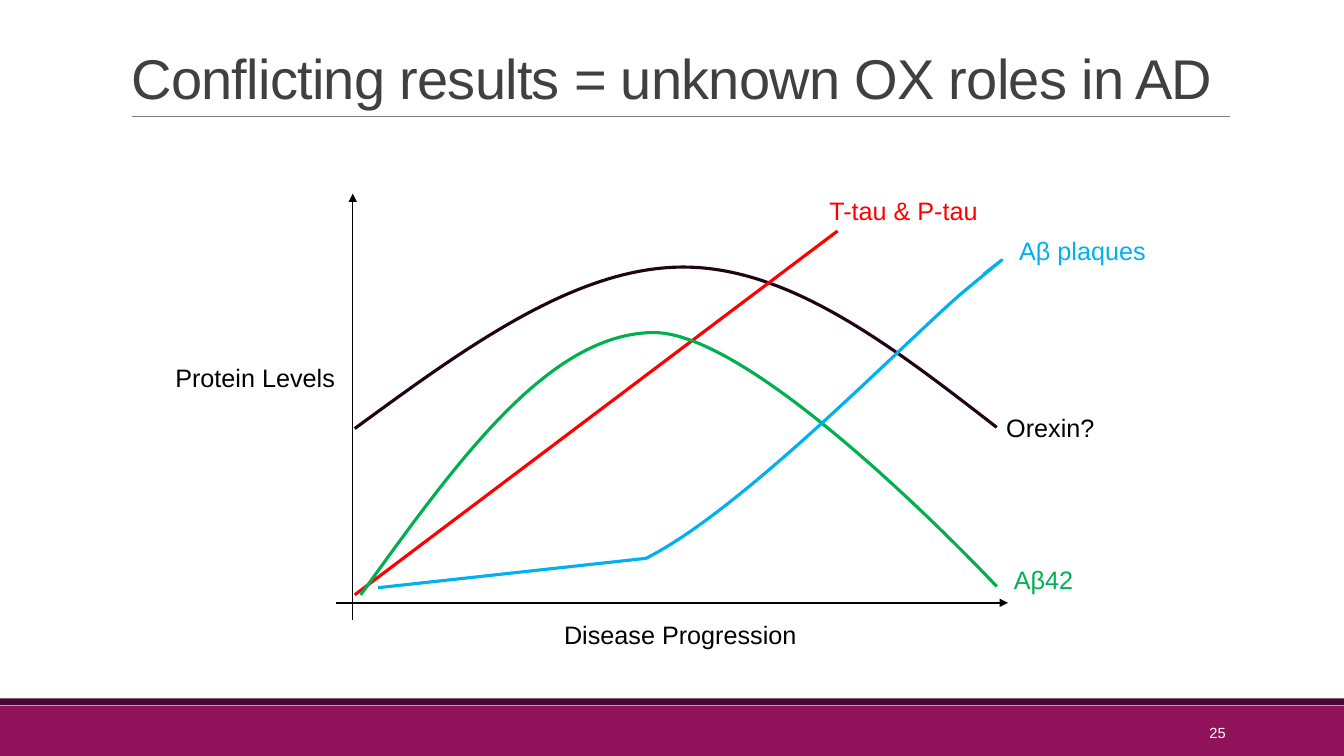
from dataclasses import dataclass

import pptx
import pptx.dml.color
import pptx.enum.shapes
import pptx.enum.text
import pptx.oxml
import pptx.oxml.ns
import pptx.shapes.shapetree
import pptx.util
from pptx.util import Cm

RGBColor = pptx.dml.color.RGBColor
Align = pptx.enum.text.PP_ALIGN
Anchor = pptx.enum.text.MSO_ANCHOR
AutoSize = pptx.enum.text.MSO_AUTO_SIZE
Shapes = pptx.shapes.shapetree.SlideShapes | pptx.shapes.shapetree.GroupShapes

WHITE = RGBColor(0xFF, 0xFF, 0xFF)
BLACK = RGBColor(0x00, 0x00, 0x00)
CHARCOAL = RGBColor(0x40, 0x40, 0x40)
GREY = RGBColor(0x80, 0x80, 0x80)
MAGENTA = RGBColor(0x90, 0x12, 0x5A)
PLUM = RGBColor(0x45, 0x09, 0x30)
DARK_PLUM = RGBColor(0x1E, 0x04, 0x15)
RED = RGBColor(0xFF, 0x00, 0x00)
GREEN = RGBColor(0x00, 0xB0, 0x50)
BLUE = RGBColor(0x00, 0xB0, 0xF0)

PAGE_WIDTH, PAGE_HEIGHT = 33.87, 19.05

Point = tuple[float, float]


@dataclass
class Band:
    top: float
    height: float
    color: RGBColor


@dataclass
class Line:
    start: Point
    end: Point
    color: RGBColor
    weight: float
    arrow: bool = False


@dataclass
class Curve:
    """Each segment lists its control points and its end: one for a line, three for a cubic."""
    start: Point
    segments: list[list[Point]]
    color: RGBColor


@dataclass
class Label:
    text: str
    left: float
    top: float
    width: float
    color: RGBColor
    height: float = 1.02
    size: float = 18
    align: Align = Align.CENTER
    anchor: Anchor = Anchor.TOP
    auto_size: AutoSize = AutoSize.SHAPE_TO_FIT_TEXT
    line_spacing: float = 1.0
    tracking: float = 0


BANDS = [Band(17.78, 1.27, MAGENTA), Band(17.6, 0.17, PLUM)]
TITLE_RULE = Line((2.95 + 0.38, 2.94), (31, 2.94), GREY, 0.5)
TITLE = Label("Conflicting results = unknown OX roles in AD", 3.06, 0.79, 27.94, CHARCOAL,
              height=2.13, size=40, align=Align.LEFT, anchor=Anchor.BOTTOM,
              auto_size=AutoSize.NONE, line_spacing=0.85, tracking=-0.5)
PAGE_NUMBER = Label("25", 27.51, 17.95, 3.63, WHITE, size=10.5, align=Align.RIGHT,
                    anchor=Anchor.MIDDLE, auto_size=AutoSize.NONE)

AXES = [
    Line((8.48, 15.19), (25.4, 15.19), BLACK, 1, arrow=True),
    Line((8.89, 15.62), (8.89, 4.88), BLACK, 1, arrow=True),
]

CURVES = [
    Curve((8.94, 10.8), [[(11.73, 8.76), (14.5, 6.73), (17.22, 6.73)],
                         [(19.91, 6.73), (22.5, 8.74), (25.12, 10.77)]], DARK_PLUM),
    Curve((8.94, 14.99), [[(21.11, 5.82)]], RED),
    Curve((9.09, 14.99), [[(11.46, 11.71), (13.79, 8.41), (16.46, 8.38)],
                          [(19.13, 8.36), (25.12, 14.78), (25.12, 14.78)]], GREEN),
    Curve((9.53, 14.81), [[(16.28, 14.07)],
                          [(18.75, 12.83), (22.86, 8.56), (24.26, 7.37)],
                          [(25.25, 6.55)], [(24.79, 6.91)]], BLUE),
]

LABELS = [
    Label("Protein Levels", 2.77, 9, 7.32, BLACK),
    Label("Aβ plaques", 24.42, 5.81, 5.72, BLUE),
    Label("Disease Progression", 8.89, 15.47, 16.51, BLACK),
    Label("Orexin?", 23.61, 10.26, 5.72, BLACK),
    Label("T-tau & P-tau", 19.91, 4.8, 5.72, RED),
    Label("Aβ42", 23.44, 14.1, 5.72, GREEN),
]


def draw_band(shapes: Shapes, band: Band) -> None:
    shape = shapes.add_shape(pptx.enum.shapes.MSO_SHAPE.RECTANGLE, Cm(0), Cm(band.top),
                             Cm(PAGE_WIDTH), Cm(band.height))
    shape.shadow.inherit = False
    shape.fill.solid()
    shape.fill.fore_color.rgb = band.color
    shape.line.fill.background()


def draw_line(shapes: Shapes, line: Line) -> None:
    connector = shapes.add_connector(pptx.enum.shapes.MSO_CONNECTOR.STRAIGHT,
                                     *map(Cm, line.start + line.end))
    connector.line.color.rgb = line.color
    connector.line.width = pptx.util.Pt(line.weight)
    properties = connector._element.spPr
    namespace = pptx.oxml.ns.nsdecls("a")
    if line.arrow:
        outline = properties.find(pptx.oxml.ns.qn("a:ln"))
        outline.append(pptx.oxml.parse_xml(f'<a:tailEnd {namespace} type="triangle"/>'))
    properties.append(pptx.oxml.parse_xml(f"<a:effectLst {namespace}/>"))


def draw_curve(shapes: Shapes, curve: Curve) -> None:
    """Lay out all points as straight steps, then join each cubic's three steps into one."""
    points = [point for segment in curve.segments for point in segment]
    builder = shapes.build_freeform(*map(Cm, curve.start))
    builder.add_line_segments([(Cm(x), Cm(y)) for x, y in points], close=False)
    shape = builder.convert_to_shape()
    steps = iter(list(shape._element.iter(pptx.oxml.ns.qn("a:lnTo"))))
    for segment in curve.segments:
        first, *others = [next(steps) for _ in segment]
        if others:
            first.tag = pptx.oxml.ns.qn("a:cubicBezTo")
        for step in others:
            first.append(step[0])
            step.getparent().remove(step)
    shape.shadow.inherit = False
    shape.fill.background()
    shape.line.color.rgb = curve.color
    shape.line.width = pptx.util.Pt(2.25)


def draw_label(shapes: Shapes, label: Label) -> None:
    box = shapes.add_textbox(Cm(label.left), Cm(label.top), Cm(label.width), Cm(label.height))
    frame = box.text_frame
    frame.word_wrap = True
    frame.auto_size = label.auto_size
    frame.vertical_anchor = label.anchor
    para = frame.paragraphs[0]
    para.alignment = label.align
    para.line_spacing = label.line_spacing
    span = para.add_run()
    span.text = label.text
    span.font.name = "Arial"
    span.font.size = pptx.util.Pt(label.size)
    span.font.color.rgb = label.color
    if label.tracking:
        span.font._element.set("spc", str(round(label.tracking * 100)))


def main() -> None:
    deck = pptx.Presentation()
    deck.slide_width, deck.slide_height = Cm(PAGE_WIDTH), Cm(PAGE_HEIGHT)
    page = deck.slides.add_slide(deck.slide_layouts[6])
    for band in BANDS:
        draw_band(page.shapes, band)
    draw_line(page.shapes, TITLE_RULE)
    draw_label(page.shapes, TITLE)
    draw_label(page.shapes, PAGE_NUMBER)
    diagram = page.shapes.add_group_shape().shapes
    for axis in AXES:
        draw_line(diagram, axis)
    for curve in CURVES:
        draw_curve(diagram, curve)
    for label in LABELS:
        draw_label(diagram, label)
    deck.save("out.pptx")


if __name__ == "__main__":
    main()
